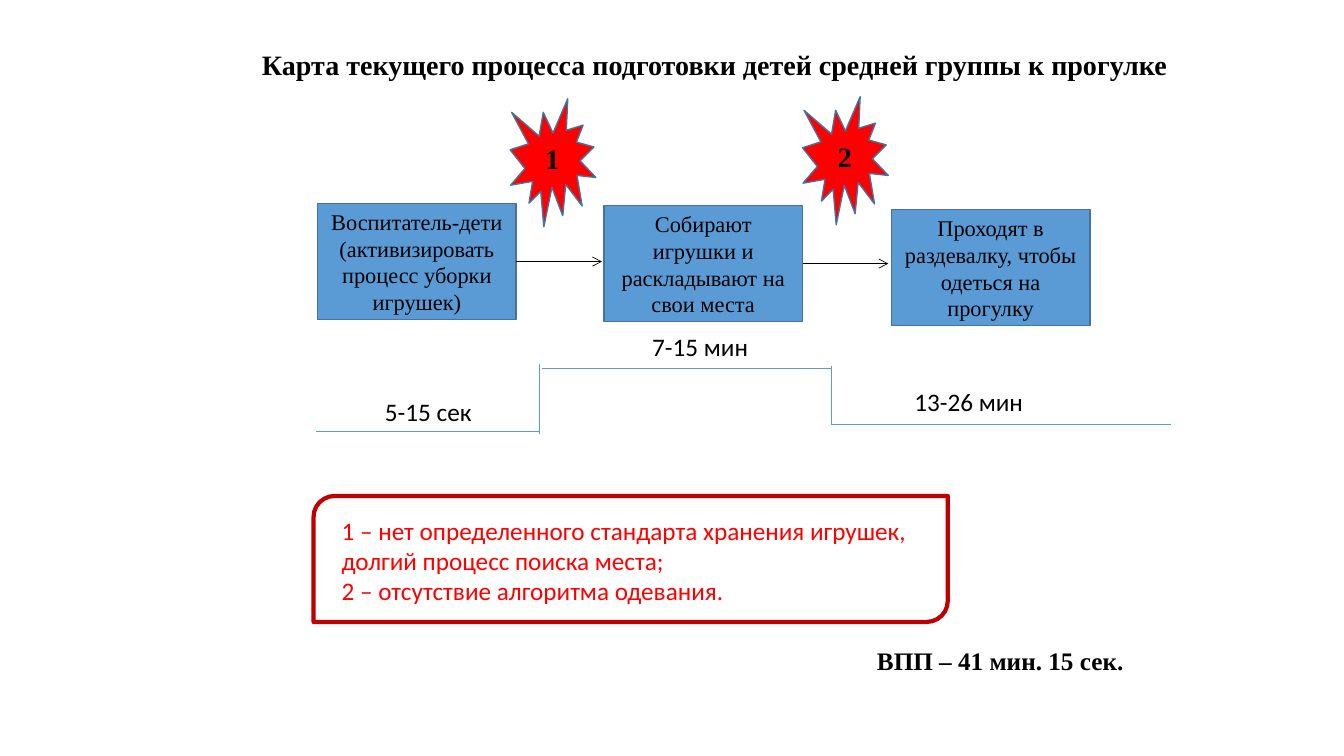
from pptx import Presentation
from pptx.dml.color import RGBColor
from pptx.enum.shapes import MSO_CONNECTOR, MSO_SHAPE as SHAPE
from pptx.enum.text import MSO_ANCHOR, MSO_AUTO_SIZE, PP_ALIGN
from pptx.oxml.ns import qn
from pptx.util import Inches, Pt
from lxml.etree import SubElement

SERIF, SANS = "Times New Roman", "Calibri"
BLACK, RED, DARK_RED = "000000", "FF0000", "C00000"
BLUE, DARK_BLUE = "5B9BD5", "43739E"
RIGHT_SIDE = 3


def color(code):
    """Turn a hex string into a colour."""
    return RGBColor.from_string(code)


def write(shape, lines, size, font, code=BLACK, bold=False, align=PP_ALIGN.LEFT):
    """Write the lines as formatted paragraphs."""
    shape.text_frame.text = "\n".join(lines)
    for para in shape.text_frame.paragraphs:
        para.alignment = align
        for span in para.runs:
            span.font.size = Pt(size)
            span.font.name = font
            span.font.bold = bold
            span.font.color.rgb = color(code)


def add_figure(slide, kind, box, fill, line, width):
    """Add a preset shape with a fill and an outline."""
    shape = slide.shapes.add_shape(kind, *map(Inches, box))
    shape.shadow.inherit = False
    if fill:
        shape.fill.solid()
        shape.fill.fore_color.rgb = color(fill)
    else:
        shape.fill.background()
    shape.line.color.rgb = color(line)
    shape.line.width = Pt(width)
    shape.text_frame.vertical_anchor = MSO_ANCHOR.MIDDLE
    return shape


def add_label(slide, box, lines, size=18, font=SANS, code=BLACK, bold=False):
    """Add an unwrapped text box that fits its text."""
    label = slide.shapes.add_textbox(*map(Inches, box))
    label.text_frame.word_wrap = False
    label.text_frame.auto_size = MSO_AUTO_SIZE.SHAPE_TO_FIT_TEXT
    write(label, lines, size, font, code, bold)


def add_line(slide, start, end, code, arrow=False):
    """Add a thin straight line, with an arrowhead if asked."""
    line = slide.shapes.add_connector(MSO_CONNECTOR.STRAIGHT, *map(Inches, start + end))
    line.line.color.rgb = color(code)
    line.line.width = Pt(0.5)
    if arrow:
        SubElement(line.line._get_or_add_ln(), qn("a:tailEnd"), type="arrow")
    SubElement(line._element.spPr, qn("a:effectLst"))
    return line


def add_process(slide, left, top):
    """Place the steps, the arrows between them and the problem bursts."""
    width, height = 1.97, 1.15
    steps = [
        (0, 0, ["Воспитатель-дети", "(активизировать процесс уборки игрушек)"]),
        (2.84, 0.02, ["Собирают игрушки и раскладывают на свои места"]),
        (5.69, 0.06, ["Проходят в раздевалку, чтобы одеться на прогулку"]),
    ]
    boxes = []
    for x, y, lines in steps:
        box = add_figure(slide, SHAPE.RECTANGLE, (left + x, top + y, width, height),
                         BLUE, DARK_BLUE, 1)
        write(box, lines, 16, SERIF, align=PP_ALIGN.CENTER)
        boxes.append(box)
    for number, x, y in (("1", 1.91, -1.04), ("2", 4.81, -1.06)):
        burst = add_figure(slide, SHAPE.EXPLOSION1, (left + x, top + y, 0.85, 1.27),
                           RED, DARK_BLUE, 1)
        write(burst, [number], 20, SERIF, bold=True, align=PP_ALIGN.CENTER)
    for box, (x, y, _) in zip(boxes, steps[:-1]):
        start = (left + x + width, top + y + height / 2)
        arrow = add_line(slide, start, (start[0] + 0.85, start[1]), BLACK, arrow=True)
        arrow.begin_connect(box, RIGHT_SIDE)


def add_timeline(slide, left, top):
    """Place the stepped time line and the duration of each step."""
    first, second = left + 2.22, left + 5.12
    low, high, last = top + 0.67, top + 0.04, top + 0.6
    for start, end in (
        ((left, low), (first, low)),
        ((first, low + 0.03), (first, top)),
        ((first + 0.03, high), (second, high)),
        ((second, high - 0.02), (second, last + 0.01)),
        ((second, last), (left + 8.48, last)),
    ):
        add_line(slide, start, end, BLUE)
    for x, y, width, duration in (
        (0.59, 0.27, 1.07, "5-15 сек"),
        (3.24, -0.37, 1.16, "7-15 мин"),
        (5.84, 0.17, 1.29, "13-26 мин"),
    ):
        add_label(slide, (left + x, top + y, width, 0.4), [duration])


def add_problems(slide, left, top):
    """Place the framed list of problems."""
    add_figure(slide, SHAPE.ROUND_2_DIAG_RECTANGLE, (left, top, 6.29, 1.25),
               None, DARK_RED, 3)
    add_label(slide, (left + 0.18, top + 0.14, 5.93, 1.01), [
        "1 – нет определенного стандарта хранения игрушек,",
        "долгий процесс поиска места;",
        "2 – отсутствие алгоритма одевания.",
    ], code=RED)


def main():
    """Build the process map and save it."""
    deck = Presentation()
    deck.slide_width, deck.slide_height = Inches(13.33), Inches(7.5)
    slide = deck.slides.add_slide(deck.slide_layouts[6])
    add_label(slide, (2.5, 0.42, 9.32, 0.44),
              ["Карта текущего процесса подготовки детей средней группы к прогулке"],
              20, SERIF, bold=True)
    add_process(slide, 3.15, 2.02)
    add_timeline(slide, 3.13, 3.61)
    add_problems(slide, 3.11, 4.92)
    add_label(slide, (8.6, 6.35, 2.67, 0.4), ["ВПП – 41 мин. 15 сек."], 18, SERIF, bold=True)
    deck.save("out.pptx")


if __name__ == "__main__":
    main()
